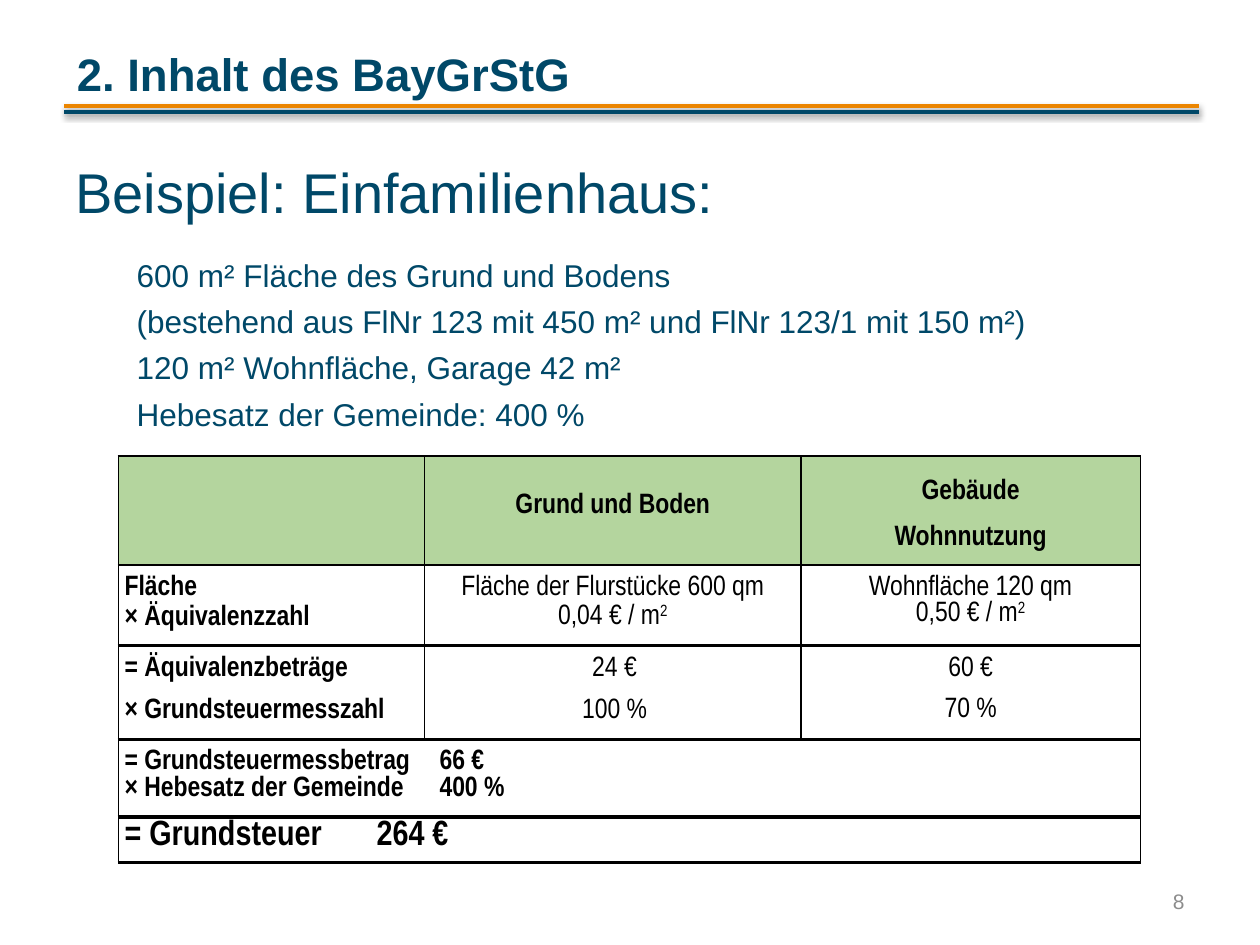
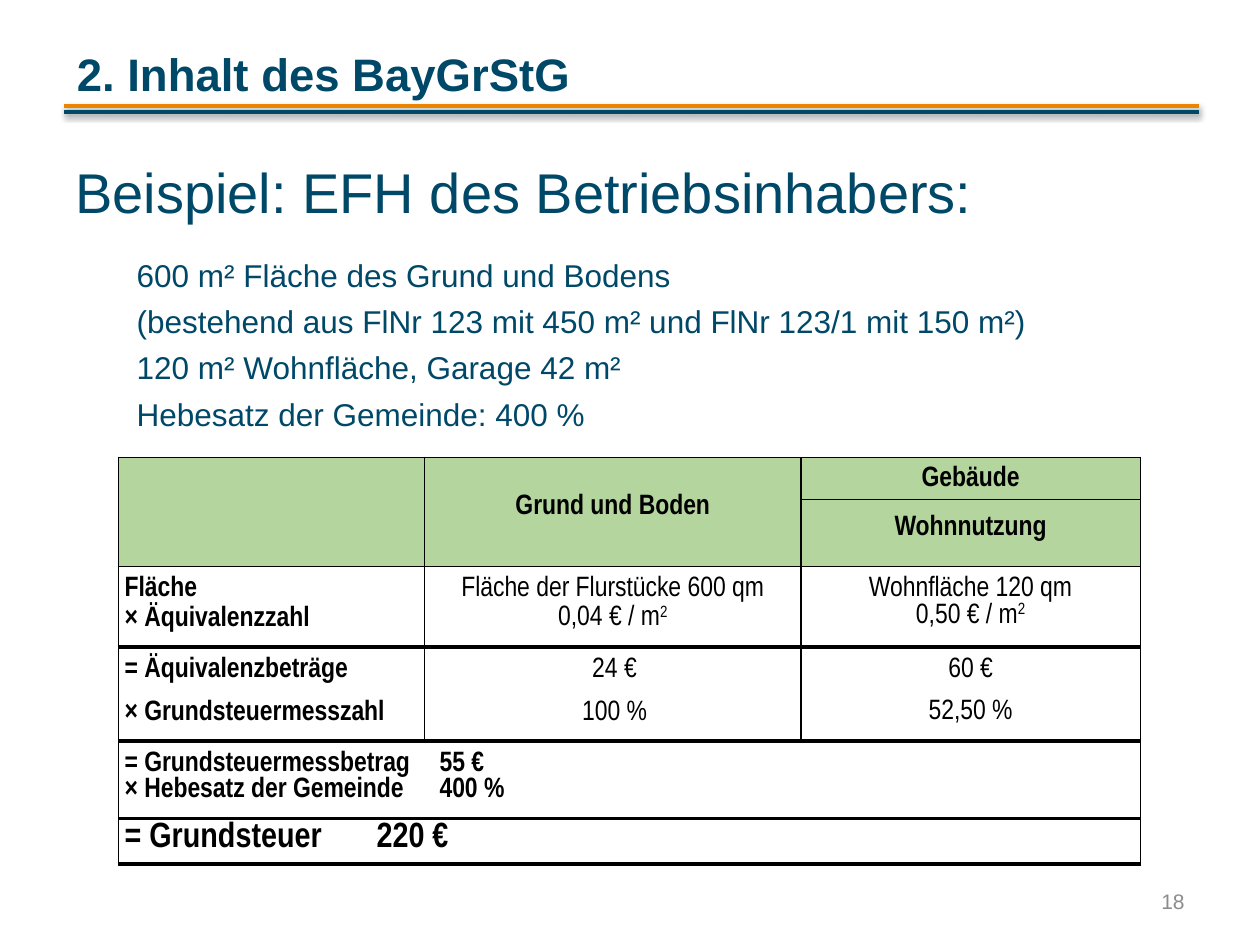
from lxml import etree
from pptx import Presentation
from pptx.dml.color import RGBColor
from pptx.enum.shapes import MSO_CONNECTOR
from pptx.enum.text import MSO_ANCHOR, PP_ALIGN
from pptx.oxml.ns import qn
from pptx.util import Pt

LEFT, MID, RIGHT = PP_ALIGN.LEFT, PP_ALIGN.CENTER, PP_ALIGN.RIGHT
TOP, CENTER, BOTTOM = MSO_ANCHOR.TOP, MSO_ANCHOR.MIDDLE, MSO_ANCHOR.BOTTOM
LINE = MSO_CONNECTOR.STRAIGHT
BLUE, GOLD, GREEN, GREY, BLACK = "004868", "EB8500", "B4D59E", "8C8C8C", "000000"
WIDE, NARROW = "Arial", "Arial Narrow"
THIN, THICK = 1, 2.25
COLS = [175, 215, 194]
FACTS = """600 m² Fläche des Grund und Bodens
(bestehend aus FlNr 123 mit 450 m² und FlNr 123/1 mit 150 m²)
120 m² Wohnfläche, Garage 42 m²
Hebesatz der Gemeinde: 400 %"""


def hue(code):
    """Turn a hex string into a colour."""
    return RGBColor.from_string(code)


def add(node, tag, **attrs):
    """Append an XML child with attributes."""
    child = etree.SubElement(node, qn(tag))
    for key, value in attrs.items():
        child.set(key, str(value))
    return child


def write(frame, text, font=WIDE, size=16, color=BLACK, bold=False, align=LEFT,
          gap=0, first=0, indent=0, line=None, tab=None, more=False):
    """Write one paragraph per line; a part after ^ is raised."""
    for index, row in enumerate(text.split("\n")):
        para = frame.add_paragraph() if index or more else frame.paragraphs[0]
        props = para._p.get_or_add_pPr()
        props.set("marL", str(Pt(indent)))
        props.set("indent", "0")
        para.alignment = align
        para.space_before = Pt(gap if index else first)
        if line:
            para.line_spacing = Pt(line)
        if tab:
            add(add(props, "a:tabLst"), "a:tab", pos=Pt(tab), algn="ctr")
        for raised, part in enumerate(row.split("^")):
            run = para.add_run()
            run.text = part
            run.font.name, run.font.size = font, Pt(size)
            run.font.bold, run.font.color.rgb = bold, hue(color)
            if raised:
                run.font._element.set("baseline", "30000")


def text_box(slide, box, anchor=TOP):
    """Add a wrapping text box and return its frame."""
    frame = slide.shapes.add_textbox(*map(Pt, box)).text_frame
    frame.word_wrap = True
    frame.vertical_anchor = anchor
    return frame


def head(slide, box, text):
    """Place the title and the two rules below it."""
    left, top, width, height = box
    title = slide.shapes.title
    title.left, title.top = Pt(left), Pt(top)
    title.width, title.height = Pt(width), Pt(height)
    frame = title.text_frame
    frame.vertical_anchor, frame.margin_bottom = BOTTOM, Pt(1.5)
    write(frame, text, size=26, color=BLUE, bold=True)
    for drop, color in ((1.5, GOLD), (5.1, BLUE)):
        y = Pt(top + height + drop)
        rule = slide.shapes.add_connector(LINE, Pt(left), y, Pt(left + 648.7), y)
        rule.line.color.rgb, rule.line.width = hue(color), Pt(2)
        glow = add(add(rule._element.spPr, "a:effectLst"), "a:outerShdw",
                   blurRad=Pt(3.1), dist=Pt(1.8), dir=5400000, rotWithShape=0)
        add(add(glow, "a:srgbClr", val=BLACK), "a:alpha", val=35000)


def intro(slide, box, text):
    """Place the example heading and its facts."""
    frame = text_box(slide, box)
    frame.margin_top = Pt(7)
    write(frame, text, size=32, color=BLUE)
    write(frame, FACTS, size=18, color=BLUE, first=18.3, gap=4.7,
          indent=35, more=True)


def frame_cell(cell, above, below, fill):
    """Set the borders, margins and fill of a cell."""
    props = cell._tc.get_or_add_tcPr()
    for side, width in zip("LRTB", (THIN, THIN, above, below)):
        edge = add(props, "a:ln" + side, w=Pt(width))
        add(add(edge, "a:solidFill"), "a:srgbClr", val=BLACK)
    cell.margin_left = cell.margin_right = 0
    cell.margin_top = cell.margin_bottom = 0
    if fill:
        cell.fill.solid()
        cell.fill.fore_color.rgb = hue(fill)
    else:
        cell.fill.background()


def tax_table(slide, box, rate, base, tax, split):
    """Place the tax table, with a split or a single header."""
    heads = [24, 38.3] if split else [62.3]
    rows = heads + [44.5, 49.2, 42.3, 26.1]
    n = len(heads)
    table = slide.shapes.add_table(len(rows), len(COLS), *map(Pt, box),
                                   sum(map(Pt, COLS)), sum(map(Pt, rows))).table
    table.first_row = table.horz_banding = False
    for col, width in zip(table.columns, COLS):
        col.width = Pt(width)
    for r, height in enumerate(rows):
        table.rows[r].height = Pt(height)
        for c in range(len(COLS)):
            frame_cell(table.cell(r, c), THICK if r > n else THIN,
                       THICK if r >= n else THIN, GREEN if r < n else None)

    def put(r, c, text, top=5.8, left=0, anchor=TOP, **form):
        """Write into a cell."""
        cell = table.cell(r, c)
        cell.margin_top, cell.margin_left = Pt(top), Pt(left)
        cell.vertical_anchor = anchor
        write(cell.text_frame, text, font=NARROW, **form)

    for r in (n + 2, n + 3):
        table.cell(r, 0).merge(table.cell(r, 2))
    title = dict(anchor=CENTER, bold=True, align=MID)
    if split:
        for c in (0, 1):
            table.cell(0, c).merge(table.cell(1, c))
        put(0, 2, "Gebäude", line=9.8, **title)
        put(1, 2, "Wohnnutzung", top=0, line=9.8, **title)
    else:
        put(0, 2, "Gebäude\nWohnnutzung", gap=11.1, **title)
    put(0, 1, "Grund und Boden", top=0, line=9.8, **title)

    label = dict(left=3.5, bold=True)
    put(n, 0, "Fläche\n× Äquivalenzzahl", gap=1.9, **label)
    put(n, 1, "Fläche der Flurstücke 600 qm\n0,04 € / m^2", gap=1.5, align=MID)
    put(n, 2, "Wohnfläche 120 qm\n0,50 € / m^2", align=MID)
    put(n + 1, 0, "= Äquivalenzbeträge\n× Grundsteuermesszahl", gap=9.4, **label)
    put(n + 1, 1, "24 €\n100 %", gap=9.4, align=MID, left=2)
    put(n + 1, 2, f"60 €\n{rate}", gap=8.7, align=MID)
    put(n + 2, 0, f"= Grundsteuermessbetrag\t{base}\n× Hebesatz der Gemeinde\t400 %",
        tab=386, **label)
    put(n + 3, 0, f"= Grundsteuer\t{tax}", size=20, line=9.8, tab=389.5,
        anchor=CENTER, **label)


def example(deck, name, number, top, *values):
    """Add one slide with a worked example."""
    slide = deck.slides.add_slide(deck.slide_layouts[5])
    head(slide, (36.7, 22.3, 573, 36.7), "2. Inhalt des BayGrStG")
    intro(slide, (36, 82.8, 648, 165), name)
    tax_table(slide, (67.7, top), *values)
    foot = text_box(slide, (516, 500.4, 168, 28.8), CENTER)
    write(foot, number, size=12, color=GREY, align=RIGHT)


def main():
    """Build the deck."""
    deck = Presentation()
    deck.slide_width, deck.slide_height = Pt(720), Pt(540)
    example(deck, "Beispiel: Einfamilienhaus:", "8", 260.6,
            "70 %", "66 €", "264 €", False)
    example(deck, "Beispiel: EFH des Betriebsinhabers:", "18", 261.4,
            "52,50 %", "55 €", "220 €", True)
    deck.save("out.pptx")


if __name__ == "__main__":
    main()
